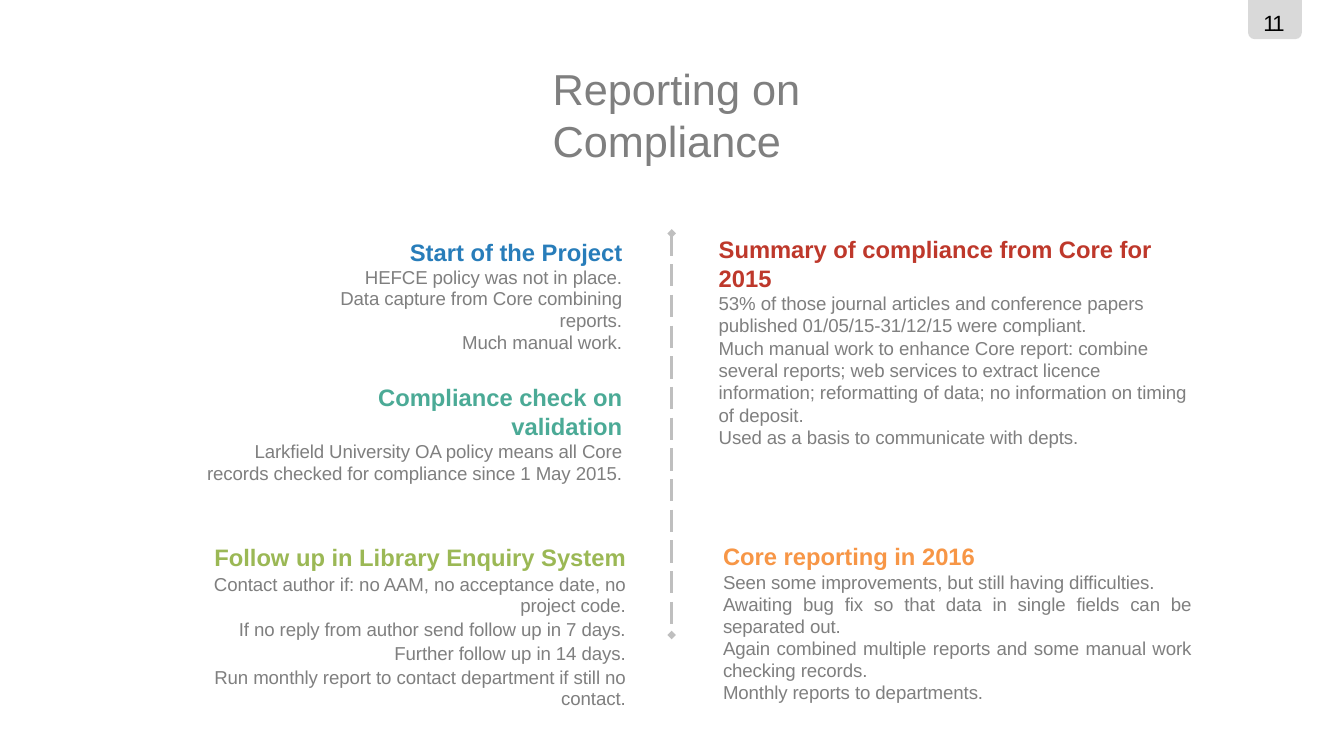
from pptx import Presentation
from pptx.dml.color import RGBColor
from pptx.enum.dml import MSO_LINE
from pptx.enum.shapes import MSO_CONNECTOR, MSO_SHAPE
from pptx.enum.text import PP_ALIGN
from pptx.oxml.ns import qn
from pptx.util import Emu, Pt
from lxml import etree

PX = 9144
SLIDE = (2199, 1237)
FONT = "Arial"
GREY, RULE, TAB = "7F7F7F", "BFBFBF", "D9D9D9"
LEFT, RIGHT, JUSTIFY = PP_ALIGN.LEFT, PP_ALIGN.RIGHT, PP_ALIGN.JUSTIFY

TITLE = "Reporting on Compliance"
PAGE = "11"
SECTIONS = [
    dict(box=(502, 389, 516, 159), align=RIGHT, color="287DBA", indent=0, line=25.6, gap=0,
         heading="Start of the Project",
         body=["HEFCE policy was not in place.",
               "Data capture from Core combining reports.",
               "Much manual work."]),
    dict(box=(331, 627, 687, 167), align=RIGHT, color="4BAA96", indent=234, line=25.6, gap=0.9,
         heading="Compliance check on validation",
         body=["Larkfield University OA policy means all Core records checked "
               "for compliance since 1 May 2015."]),
    dict(box=(341, 888, 683, 316), align=RIGHT, color="9BB855", indent=0, line=25.6, gap=2.4,
         heading="Follow up in Library Enquiry System",
         body=["Contact author if: no AAM, no acceptance date, no project code.",
               "If no reply from author send follow up in 7 days.",
               "Further follow up in 14 days.",
               "Run monthly report to contact department if still no contact."]),
    dict(box=(1176, 385, 774, 512), align=LEFT, color="BE382B", indent=0, line=26.3, gap=0,
         heading="Summary of compliance from Core for 2015",
         body=["53% of those journal articles and conference papers published "
               "01/05/15-31/12/15 were compliant.",
               "Much manual work to enhance Core report: combine several reports; "
               "web services to extract licence information; reformatting of data; "
               "no information on timing of deposit.",
               "Used as a basis to communicate with depts."]),
    dict(box=(1183, 887, 767, 271), align=JUSTIFY, color="F79646", indent=0, line=25.6, gap=0.7,
         heading="Core reporting in 2016",
         body=["Seen some improvements, but still having difficulties.",
               "Awaiting bug fix so that data in single fields can be separated out.",
               "Again combined multiple reports and some manual work checking records.",
               "Monthly reports to departments."]),
]
DIVIDER = dict(x=1099, top=382, bottom=1039, diamond=14)


def px(n):
    return Emu(round(n * PX))


def rgb(value):
    return RGBColor.from_string(value)


def add_box(slide, box):
    frame = slide.shapes.add_textbox(*map(px, box)).text_frame
    frame.word_wrap = True
    frame.margin_left = frame.margin_right = frame.margin_top = frame.margin_bottom = 0
    return frame


def write(paragraph, text, size, color, line, align=LEFT, bold=False, gap=0, indent=0, tracking=0):
    run = paragraph.add_run()
    run.text = text
    font = paragraph.font
    font.name, font.size, font.bold = FONT, Pt(size), bold
    font.color.rgb = rgb(color)
    paragraph.alignment = align
    paragraph.line_spacing = Pt(line)
    paragraph.space_before = Pt(gap)
    if indent:
        paragraph._p.get_or_add_pPr().set("marL", str(px(indent)))
    if tracking:
        run._r.get_or_add_rPr().set("spc", str(tracking))


def add_solid(slide, preset, box, color):
    shape = slide.shapes.add_shape(preset, *map(px, box))
    shape.shadow.inherit = False
    shape.fill.solid()
    shape.fill.fore_color.rgb = rgb(color)
    shape.line.fill.background()
    return shape


def add_section(slide, section):
    frame = add_box(slide, section["box"])
    write(frame.paragraphs[0], section["heading"], 28, section["color"], 33.4,
          section["align"], bold=True, indent=section["indent"])
    for text in section["body"]:
        write(frame.add_paragraph(), text, 22, GREY, section["line"],
              section["align"], gap=section["gap"], tracking=-10)


def add_divider(slide, x, top, bottom, diamond):
    rule = slide.shapes.add_connector(MSO_CONNECTOR.STRAIGHT, px(x), px(top), px(x), px(bottom))
    rule.line.color.rgb = rgb(RULE)
    rule.line.width = Pt(3.3)
    rule.line.dash_style = MSO_LINE.LONG_DASH
    etree.SubElement(rule._element.spPr, qn("a:effectLst"))
    for y in (top, bottom):
        add_solid(slide, MSO_SHAPE.DIAMOND,
                  (x - diamond / 2, y - diamond / 2, diamond, diamond), RULE)


def main():
    deck = Presentation()
    deck.slide_width, deck.slide_height = map(px, SLIDE)
    slide = deck.slides.add_slide(deck.slide_layouts[6])

    tab = add_solid(slide, MSO_SHAPE.ROUND_2_SAME_RECTANGLE, (2042, 0, 88, 64), TAB)
    tab.rotation = 180
    write(add_box(slide, (904, 102, 715, 172)).paragraphs[0], TITLE, 51, GREY, 61.3)
    write(add_box(slide, (2067, 16, 38, 44)).paragraphs[0], PAGE, 26, "000000", 31, tracking=-190)
    for section in SECTIONS:
        add_section(slide, section)
    add_divider(slide, **DIVIDER)

    deck.save("out.pptx")


if __name__ == "__main__":
    main()
